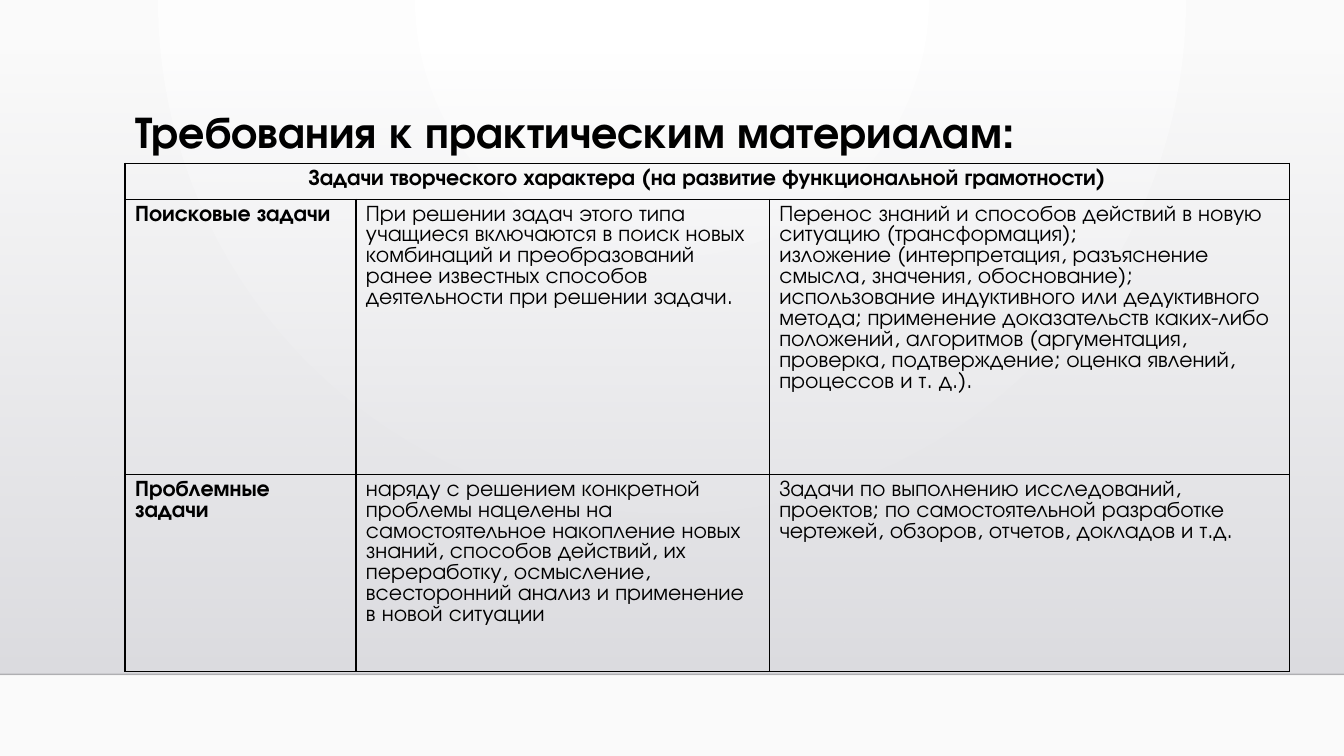
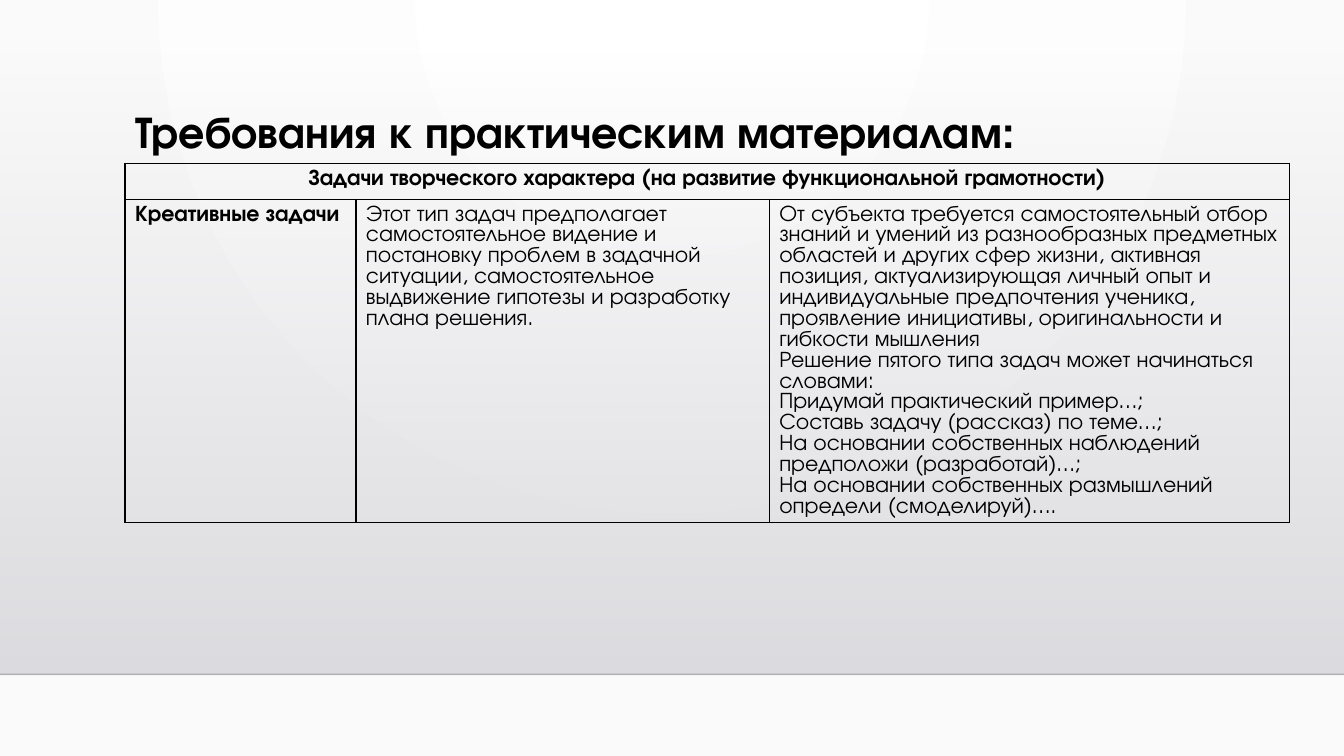
from pptx import Presentation
from pptx.dml.color import RGBColor
from pptx.enum.shapes import MSO_CONNECTOR, MSO_SHAPE
from pptx.enum.text import MSO_ANCHOR, MSO_AUTO_SIZE, PP_ALIGN
from pptx.oxml import parse_xml
from pptx.oxml.ns import nsdecls
from pptx.util import Inches, Pt

FONT = "TeX Gyre Adventor"
COLORS = {
    "text": "000000",
    "rule": "000001",
    "glow": "FFFFFF",
    "edge": "FAFAFA",
    "band_top": "DCDCE0",
    "band_bottom": "DEDEE2",
}
SLIDE_W, SLIDE_H = 13.33, 7.5
BAND_TOP, BAND_H = 0.51, 6.18
LEFT, TITLE_TOP, TABLE_TOP = 1.24, 1.04, 1.62
COLUMNS = (2.29, 4.1, 5.16)
HEADER_H = 0.36

TITLE = "Требования к практическим материалам:"
HEADER = "Задачи творческого характера (на развитие функциональной грамотности)"
TASK_SLIDES = [
    [
        (2.73, "Поисковые задачи",
         ["При решении задач этого типа учащиеся включаются в поиск новых комбинаций и "
          "преобразований ранее известных способов деятельности при решении задачи."],
         ["Перенос знаний и способов действий в новую ситуацию (трансформация);",
          "изложение (интерпретация, разъяснение смысла, значения, обоснование);",
          "использование индуктивного или дедуктивного метода; применение доказательств "
          "каких-либо положений, алгоритмов (аргументация, проверка, подтверждение; "
          "оценка явлений, процессов и т. д.)."]),
        (1.95, "Проблемные задачи",
         ["наряду с решением конкретной проблемы нацелены на самостоятельное накопление "
          "новых знаний, способов действий, их переработку, осмысление, всесторонний "
          "анализ и применение в новой ситуации"],
         ["Задачи по выполнению исследований, проектов; по самостоятельной разработке "
          "чертежей, обзоров, отчетов, докладов и т.д."]),
    ],
    [
        (3.2, "Креативные задачи",
         ["Этот тип задач предполагает самостоятельное видение и постановку проблем в "
          "задачной ситуации, самостоятельное выдвижение гипотезы и разработку плана "
          "решения."],
         ["От субъекта требуется самостоятельный отбор знаний и умений из разнообразных "
          "предметных областей и других сфер жизни, активная позиция, актуализирующая "
          "личный опыт и индивидуальные предпочтения ученика, проявление инициативы, "
          "оригинальности и гибкости мышления",
          "Решение пятого типа задач может начинаться словами:",
          "Придумай практический пример…;",
          "Составь задачу (рассказ) по теме…;",
          "На основании собственных наблюдений предположи (разработай)…;",
          "На основании собственных размышлений определи (смоделируй)…."]),
    ],
]


def color(name):
    return RGBColor.from_string(COLORS[name])


def gradient(stops, direction):
    marks = "".join(
        f'<a:gs pos="{pos * 1000}"><a:srgbClr val="{COLORS[name]}">'
        f'<a:alpha val="{alpha * 1000}"/></a:srgbClr></a:gs>'
        for pos, name, alpha in stops)
    return parse_xml(f'<a:gradFill {nsdecls("a")} rotWithShape="1">'
                     f'<a:gsLst>{marks}</a:gsLst>{direction}</a:gradFill>')


def swap_fill(parent, new_fill):
    old_fill = parent.xpath("./a:solidFill")[0]
    parent.replace(old_fill, new_fill)


def build_master(master, slide):
    master.background.fill.solid()
    swap_fill(master.element.xpath("./p:cSld/p:bg/p:bgPr")[0], gradient(
        [(0, "glow", 100), (100, "edge", 100)],
        '<a:path path="circle"><a:fillToRect l="43000" t="0" r="43000" b="100000"/></a:path>'))

    band = slide.shapes.add_shape(MSO_SHAPE.RECTANGLE, 0, Inches(BAND_TOP),
                                  Inches(SLIDE_W), Inches(BAND_H))
    band.shadow.inherit = False
    band.line.fill.background()
    band.fill.solid()
    swap_fill(band.element.spPr, gradient(
        [(0, "band_top", 0), (100, "band_bottom", 100)], '<a:lin ang="5400000" scaled="0"/>'))

    floor_y = Inches(BAND_TOP + BAND_H)
    floor = slide.shapes.add_connector(MSO_CONNECTOR.STRAIGHT, 0, floor_y,
                                       Inches(SLIDE_W), floor_y)
    floor.line.width = Pt(1)
    floor.line.color.rgb = color("rule")
    floor.element.xpath(".//a:ln//a:srgbClr")[0].append(
        parse_xml(f'<a:alpha {nsdecls("a")} val="20000"/>'))
    floor.element.spPr.append(parse_xml(f'<a:effectLst {nsdecls("a")}/>'))

    for order, part in enumerate((band, floor)):
        part.element.xpath(".//p:cNvPr")[0].set("id", str(100 + order))
        master.shapes.element.insert(2 + order, part.element)


def style(paragraph, size, bold):
    font = paragraph.font
    font.name, font.size, font.bold = FONT, Pt(size), bold
    font.color.rgb = color("text")


def add_title(slide):
    title = slide.shapes.title
    title.left, title.top = Inches(LEFT), Inches(TITLE_TOP)
    title.width, title.height = Inches(11.65), Inches(1.15)
    frame = title.text_frame
    frame.text = TITLE
    frame.word_wrap = True
    frame.auto_size = MSO_AUTO_SIZE.NONE
    frame.vertical_anchor = MSO_ANCHOR.TOP
    heading = frame.paragraphs[0]
    heading.alignment = PP_ALIGN.LEFT
    heading.line_spacing = 0.9
    style(heading, 32, True)


def frame_cell(cell):
    cell.fill.background()
    props = cell._tc.get_or_add_tcPr()
    for order, side in enumerate(("lnL", "lnR", "lnT", "lnB")):
        props.insert(order, parse_xml(
            f'<a:{side} {nsdecls("a")} w="12700"><a:solidFill>'
            f'<a:srgbClr val="{COLORS["text"]}"/></a:solidFill></a:{side}>'))


def write_cell(cell, lines, bold, align=PP_ALIGN.LEFT):
    cell.text = "\n".join(lines)
    for paragraph in cell.text_frame.paragraphs:
        paragraph.alignment = align
        paragraph.line_spacing = Pt(14.9)
        style(paragraph, 16, bold)


def add_task_table(slide, tasks):
    heights = [HEADER_H] + [task[0] for task in tasks]
    table = slide.shapes.add_table(
        len(heights), len(COLUMNS), Inches(LEFT), Inches(TABLE_TOP),
        Inches(sum(COLUMNS)), Inches(sum(heights))).table
    table.first_row = table.horz_banding = False
    for column, width in zip(table.columns, COLUMNS):
        column.width = Inches(width)
    for row, height in zip(table.rows, heights):
        row.height = Inches(height)
        for cell in row.cells:
            frame_cell(cell)

    table.cell(0, 0).merge(table.cell(0, len(COLUMNS) - 1))
    write_cell(table.cell(0, 0), [HEADER], True, PP_ALIGN.CENTER)
    for row, (_, kind, description, examples) in enumerate(tasks, 1):
        write_cell(table.cell(row, 0), [kind], True)
        write_cell(table.cell(row, 1), description, False)
        write_cell(table.cell(row, 2), examples, False)


def main():
    deck = Presentation()
    deck.slide_width, deck.slide_height = Inches(SLIDE_W), Inches(SLIDE_H)
    for number, tasks in enumerate(TASK_SLIDES):
        slide = deck.slides.add_slide(deck.slide_layouts[5])
        if number == 0:
            build_master(deck.slide_master, slide)
        add_title(slide)
        add_task_table(slide, tasks)
    deck.save("out.pptx")


if __name__ == "__main__":
    main()
